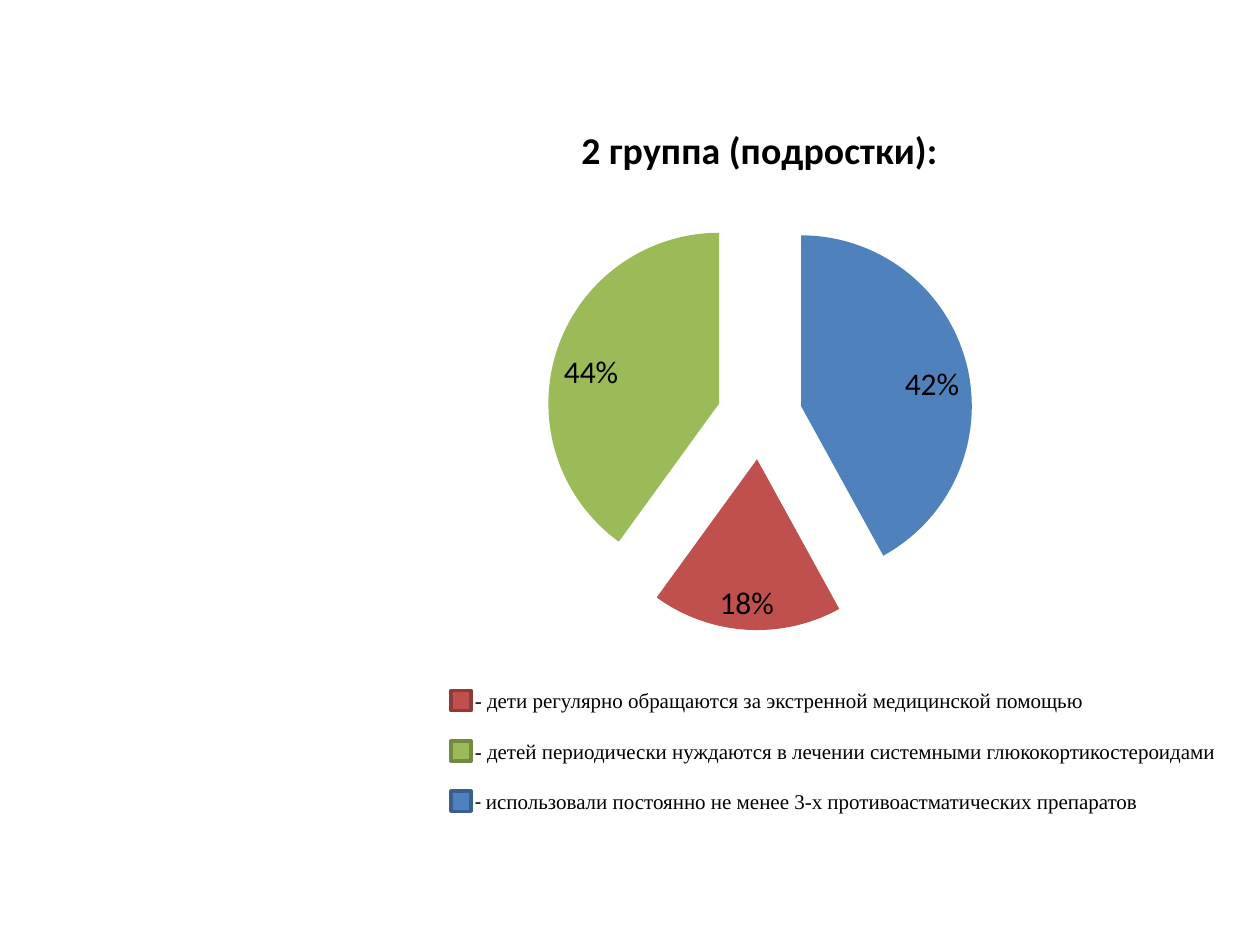
from lxml.etree import Element
from pptx import Presentation
from pptx.chart.data import CategoryChartData
from pptx.dml.color import RGBColor
from pptx.enum.chart import XL_CHART_TYPE, XL_LABEL_POSITION
from pptx.enum.shapes import MSO_SHAPE
from pptx.enum.text import MSO_AUTO_SIZE
from pptx.oxml.ns import qn
from pptx.util import Inches, Pt

COLORS = {
    "text": "000000",
    "blue": "4F81BD", "blue edge": "3A5F8C",
    "red": "C0504D", "red edge": "8E3B39",
    "green": "9BBB59", "green edge": "738A42",
}
SHARES = {"blue": 42, "red": 18, "green": 40}
EXPLOSION = 25
LABEL_OVERRIDES = {2: "44%"}
SERIF = "Times New Roman"
LEGEND = [
    ("red", SERIF, "дети регулярно обращаются за экстренной медицинской помощью"),
    ("green", SERIF, "детей периодически нуждаются в лечении системными глюкокортикостероидами"),
    ("blue", "Calibri", "использовали постоянно не менее 3-х противоастматических препаратов"),
]


def rgb(name):
    return RGBColor.from_string(COLORS[name])


def format_font(font, **values):
    for key, value in values.items():
        setattr(font, key, value)
    font.color.rgb = rgb("text")


def explode(series):
    """Pull every slice of the pie away from its centre."""
    for point in series._element.findall(qn("c:dPt")):
        explosion = Element(qn("c:explosion"), val=str(EXPLOSION))
        point.find(qn("c:spPr")).addprevious(explosion)


def add_pie(slide, left, top, width, height):
    data = CategoryChartData()
    data.categories = ["1", "2", "3"]
    data.add_series("Series 1", SHARES.values())
    chart = slide.shapes.add_chart(
        XL_CHART_TYPE.PIE, Inches(left), Inches(top), Inches(width), Inches(height), data
    ).chart
    chart.has_legend = False
    format_font(chart.font, name="Calibri", size=Pt(18))

    chart.has_title = True
    heading = chart.chart_title.text_frame
    heading.text = "2 группа (подростки):"
    format_font(heading.paragraphs[0].runs[0].font, name="Calibri", size=Pt(21.6), bold=True)

    plot = chart.plots[0]
    plot.vary_by_categories = True
    series = plot.series[0]
    for index, color in enumerate(SHARES):
        fill = series.points[index].format.fill
        fill.solid()
        fill.fore_color.rgb = rgb(color)
    explode(series)

    label_format = {
        "show_percentage": True, "show_value": False,
        "number_format": "0%", "number_format_is_linked": False,
        "position": XL_LABEL_POSITION.INSIDE_END,
    }
    for key, value in label_format.items():
        setattr(series.data_labels, key, value)
    for index, wording in LABEL_OVERRIDES.items():
        label = series.points[index].data_label
        label.text_frame.text = wording
        format_font(label.text_frame.paragraphs[0].runs[0].font, name="Calibri", size=Pt(18))
        label.position = XL_LABEL_POSITION.INSIDE_END


def add_legend_row(slide, left, top, width, height, color, dash_font, wording):
    side = 0.16
    swatch = slide.shapes.add_shape(
        MSO_SHAPE.RECTANGLE, Inches(left), Inches(top + (height - side) / 2),
        Inches(side), Inches(side),
    )
    swatch.shadow.inherit = False
    swatch.fill.solid()
    swatch.fill.fore_color.rgb = rgb(color)
    swatch.line.color.rgb = rgb(f"{color} edge")
    swatch.line.width = Pt(2)

    indent = 0.09
    frame = slide.shapes.add_textbox(
        Inches(left + indent), Inches(top), Inches(width - indent), Inches(height)
    ).text_frame
    frame.word_wrap = True
    frame.auto_size = MSO_AUTO_SIZE.SHAPE_TO_FIT_TEXT
    for text, face in (("- ", dash_font), (wording, SERIF)):
        run = frame.paragraphs[0].add_run()
        run.text = text
        format_font(run.font, name=face, size=Pt(12))


def add_legend(slide, left, top, width, row_height, pitch):
    for row, entry in enumerate(LEGEND):
        add_legend_row(slide, left, top + row * pitch, width, row_height, *entry)


def main():
    presentation = Presentation()
    presentation.slide_width, presentation.slide_height = Inches(10), Inches(7.5)
    slide = presentation.slides.add_slide(presentation.slide_layouts[6])
    add_pie(slide, 2.35, 0.78, 7.36, 4.36)
    add_legend(slide, 3.58, 5.41, 6.34, row_height=0.3, pitch=0.4)
    presentation.save("out.pptx")


if __name__ == "__main__":
    main()
